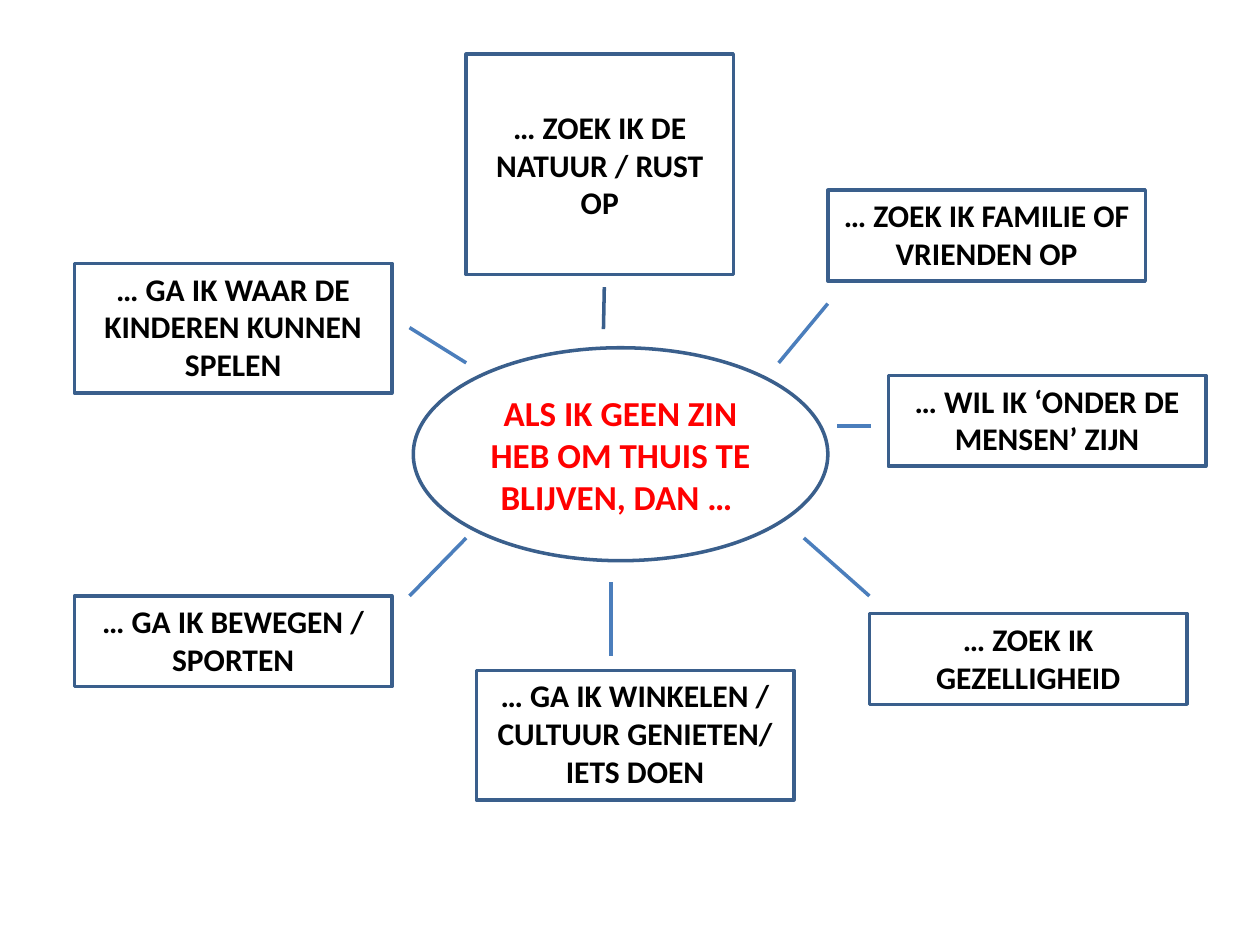
from lxml import etree
from pptx import Presentation, util as u
from pptx.dml.color import RGBColor
from pptx.enum import shapes, text
from pptx.oxml.ns import qn

WIDTH, HEIGHT = 10, 7.5
COLORS = {"outline": "3A5F8C", "spoke": "4B7EBC", "question": "FF0000", "answer": "000000"}
FONT = "Calibri"
LINE_WIDTH = 2
ANSWER_WIDTH = 2.52
ROW_HEIGHT = {2: 0.72, 3: 1.03}  # box height by number of text lines

QUESTION = ("ALS IK GEEN ZIN HEB OM THUIS TE BLIJVEN, DAN … ", (3.28, 2.76, 3.29, 1.69))
CALLOUT = ("… ZOEK IK DE NATUUR / RUST OP", (3.7, 0.43, 2.12, 1.75))
CALLOUT_POINTER = (1.057, 0.517, 1.247, 0.514)

# text, left, top, number of text lines
ANSWERS = [
    ("… ZOEK IK FAMILIE OF VRIENDEN OP", 6.57, 1.51, 2),
    ("… WIL IK ‘ONDER DE MENSEN’ ZIJN", 7.05, 2.98, 2),
    ("… ZOEK IK GEZELLIGHEID", 6.9, 4.87, 2),
    ("… GA IK WINKELEN / CULTUUR GENIETEN/ IETS DOEN", 3.78, 5.32, 3),
    ("… GA IK BEWEGEN / SPORTEN", 0.59, 4.73, 2),
    ("… GA IK WAAR DE KINDEREN KUNNEN SPELEN", 0.59, 2.09, 3),
]

# start x, start y, end x, end y
SPOKES = [
    (6.57, 2.41, 6.18, 2.88),
    (3.25, 2.6, 3.7, 2.88),
    (3.7, 4.27, 3.25, 4.73),
    (4.85, 4.62, 4.85, 5.21),
    (6.9, 4.73, 6.38, 4.27),
    (6.91, 3.38, 6.64, 3.38),
]


def color(name):
    return RGBColor.from_string(COLORS[name])


def style_line(line, name):
    line.color.rgb = color(name)
    line.width = u.Pt(LINE_WIDTH)


def add_box(page, kind, area, words, size, ink, anchor):
    box = page.shapes.add_shape(kind, *map(u.Inches, area))
    box.shadow.inherit = False
    box.fill.background()
    style_line(box.line, "outline")
    frame = box.text_frame
    frame.word_wrap = True
    frame.vertical_anchor = anchor
    para = frame.paragraphs[0]
    para.alignment = text.PP_ALIGN.CENTER
    span = para.add_run()
    span.text = words
    span.font.name = FONT
    span.font.size = u.Pt(size)
    span.font.bold = True
    span.font.color.rgb = color(ink)
    return box


def add_spoke(page, ends):
    spoke = page.shapes.add_connector(shapes.MSO_CONNECTOR.STRAIGHT, *map(u.Inches, ends))
    style_line(spoke.line, "spoke")
    etree.SubElement(spoke._element.spPr, qn("a:effectLst"))


def main():
    deck = Presentation()
    deck.slide_width, deck.slide_height = u.Inches(WIDTH), u.Inches(HEIGHT)
    page = deck.slides.add_slide(deck.slide_layouts[6])
    kinds, anchors = shapes.MSO_SHAPE, text.MSO_ANCHOR

    words, area = QUESTION
    add_box(page, kinds.OVAL, area, words, 20, "question", anchors.MIDDLE)

    words, area = CALLOUT
    callout = add_box(page, kinds.LINE_CALLOUT_1, area, words, 18, "answer", anchors.MIDDLE)
    for index, value in enumerate(CALLOUT_POINTER):
        callout.adjustments[index] = value

    for words, left, top, rows in ANSWERS:
        area = (left, top, ANSWER_WIDTH, ROW_HEIGHT[rows])
        box = add_box(page, kinds.RECTANGLE, area, words, 18, "answer", anchors.TOP)
        box.text_frame.auto_size = text.MSO_AUTO_SIZE.SHAPE_TO_FIT_TEXT

    for ends in SPOKES:
        add_spoke(page, ends)

    deck.save("out.pptx")


if __name__ == "__main__":
    main()
